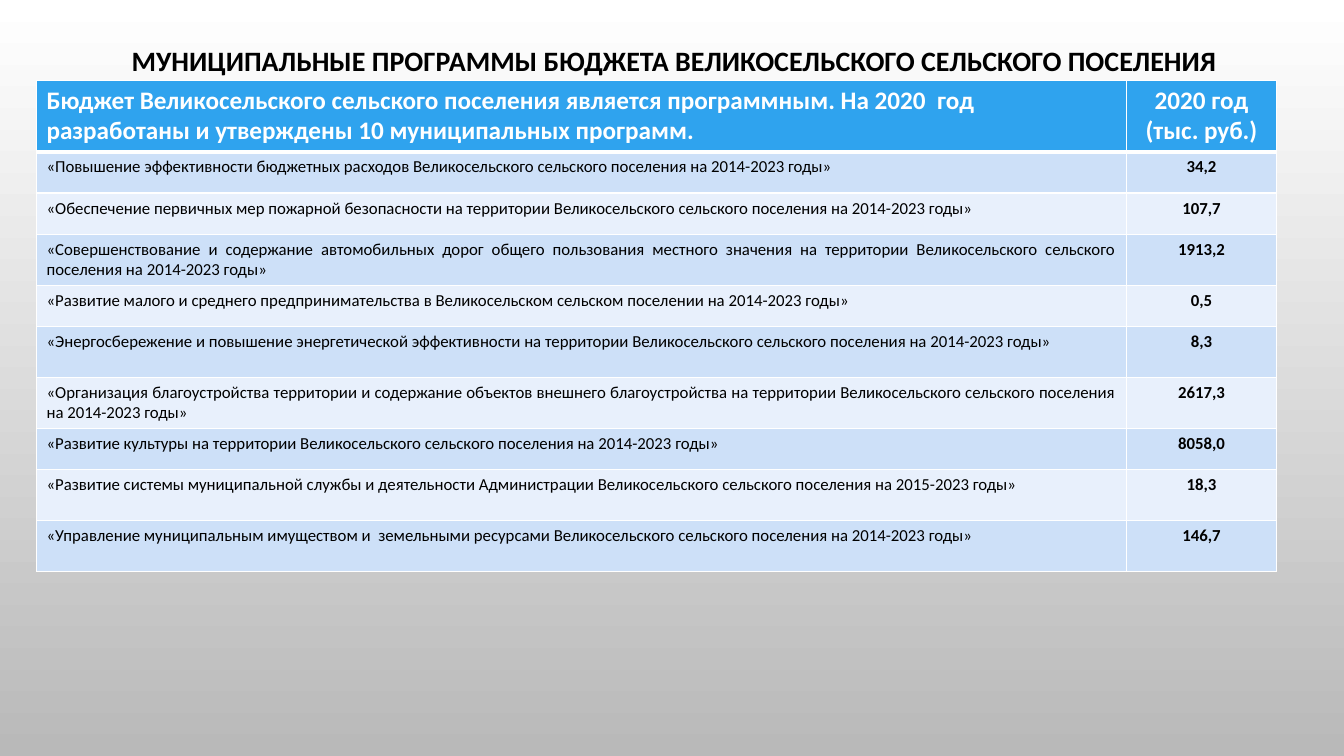
from lxml import etree
from pptx import Presentation
from pptx.dml.color import RGBColor
from pptx.enum.text import MSO_ANCHOR, PP_ALIGN
from pptx.oxml.ns import qn
from pptx.util import Cm, Pt

LEFT, CENTER, JUSTIFY = PP_ALIGN.LEFT, PP_ALIGN.CENTER, PP_ALIGN.JUSTIFY
MIDDLE = MSO_ANCHOR.MIDDLE

FONT = "Calibri"
WHITE = RGBColor(0xFF, 0xFF, 0xFF)
BLACK = RGBColor(0x00, 0x00, 0x00)
GREY = RGBColor(0xB9, 0xB9, 0xB9)
HEADER_BLUE = RGBColor(0x2F, 0xA3, 0xEE)
BANDS = (RGBColor(0xCD, 0xE0, 0xF8), RGBColor(0xE8, 0xF0, 0xFC))

HEADER_HEIGHT = Cm(1.76)
LOW_ROW, HIGH_ROW = Cm(1.04), Cm(1.28)
COLUMN_WIDTHS = (Cm(27.47), Cm(3.78))

TITLE = "МУНИЦИПАЛЬНЫЕ ПРОГРАММЫ БЮДЖЕТА ВЕЛИКОСЕЛЬСКОГО СЕЛЬСКОГО ПОСЕЛЕНИЯ"
HEADERS = (
    "Бюджет Великосельского сельского поселения является программным. "
    "На 2020  год разработаны и утверждены 10 муниципальных программ.",
    "2020 год (тыс. руб.)",
)
PROGRAMMES = (
    ("«Повышение эффективности бюджетных расходов Великосельского сельского "
     "поселения на 2014-2023 годы»", "34,2", LOW_ROW, JUSTIFY),
    ("«Обеспечение первичных мер пожарной безопасности на территории "
     "Великосельского сельского поселения на 2014-2023 годы»",
     "107,7", LOW_ROW, JUSTIFY),
    ("«Совершенствование и содержание автомобильных дорог общего пользования "
     "местного значения на территории Великосельского сельского поселения "
     "на 2014-2023 годы»", "1913,2", HIGH_ROW, JUSTIFY),
    ("«Развитие малого и среднего предпринимательства в Великосельском "
     "сельском поселении на 2014-2023 годы»", "0,5", LOW_ROW, LEFT),
    ("«Энергосбережение и повышение энергетической эффективности на территории "
     "Великосельского сельского поселения на 2014-2023 годы»",
     "8,3", HIGH_ROW, JUSTIFY),
    ("«Организация благоустройства территории и содержание объектов внешнего "
     "благоустройства на территории Великосельского сельского поселения "
     "на 2014-2023 годы»", "2617,3", HIGH_ROW, JUSTIFY),
    ("«Развитие культуры на территории Великосельского сельского поселения "
     "на 2014-2023 годы»", "8058,0", LOW_ROW, JUSTIFY),
    ("«Развитие системы муниципальной службы и деятельности Администрации "
     "Великосельского сельского поселения на 2015-2023 годы»",
     "18,3", HIGH_ROW, JUSTIFY),
    ("«Управление муниципальным имуществом и  земельными ресурсами "
     "Великосельского сельского поселения на 2014-2023 годы»",
     "146,7", HIGH_ROW, JUSTIFY),
)


def paint_background(page):
    fill = page.background.fill
    fill.gradient()
    fill.gradient_angle = 270
    for stop, color in zip(fill.gradient_stops, (WHITE, GREY)):
        stop.color.rgb = color


def write(frame, text, size, color, bold, align):
    para = frame.paragraphs[0]
    para.alignment = align
    span = para.add_run()
    span.text = text
    span.font.name = FONT
    span.font.size = Pt(size)
    span.font.bold = bold
    span.font.color.rgb = color


def add_title(page):
    title = page.shapes.title
    title.left, title.top = Cm(1.14), Cm(0.97)
    title.width, title.height = Cm(31.7), Cm(1.12)
    frame = title.text_frame
    frame.word_wrap = True
    frame.vertical_anchor = MIDDLE
    write(frame, TITLE, 20, BLACK, True, CENTER)


def draw_borders(cell, top, bottom):
    properties = cell._tc.get_or_add_tcPr()
    for side, width in (("L", 1), ("R", 1), ("T", top), ("B", bottom)):
        line = etree.SubElement(properties, qn(f"a:ln{side}"), w=str(Pt(width)))
        solid = etree.SubElement(line, qn("a:solidFill"))
        etree.SubElement(solid, qn("a:srgbClr"), val=str(WHITE))


def fill_cell(cell, text, size, color, bold, align, back, top=1, bottom=1):
    draw_borders(cell, top, bottom)
    cell.fill.solid()
    cell.fill.fore_color.rgb = back
    write(cell.text_frame, text, size, color, bold, align)


def add_programme_table(page):
    heights = [HEADER_HEIGHT] + [programme[2] for programme in PROGRAMMES]
    table = page.shapes.add_table(
        len(heights), len(COLUMN_WIDTHS), Cm(0.92), Cm(2.02),
        sum(COLUMN_WIDTHS), sum(heights)).table
    for column, width in zip(table.columns, COLUMN_WIDTHS):
        column.width = width
    for row, height in zip(table.rows, heights):
        row.height = height
    for index, (text, align) in enumerate(zip(HEADERS, (LEFT, CENTER))):
        fill_cell(table.cell(0, index), text, 18, WHITE, True, align,
                  HEADER_BLUE, bottom=3)
    for index, (name, amount, _, align) in enumerate(PROGRAMMES, start=1):
        band = BANDS[(index - 1) % 2]
        top = 3 if index == 1 else 1
        fill_cell(table.cell(index, 0), name, 12, BLACK, False, align, band, top)
        fill_cell(table.cell(index, 1), amount, 12, BLACK, True, CENTER, band, top)


def main():
    deck = Presentation()
    deck.slide_width, deck.slide_height = Cm(33.87), Cm(19.05)
    page = deck.slides.add_slide(deck.slide_layouts[5])
    paint_background(page)
    add_title(page)
    add_programme_table(page)
    deck.save("out.pptx")


if __name__ == "__main__":
    main()
